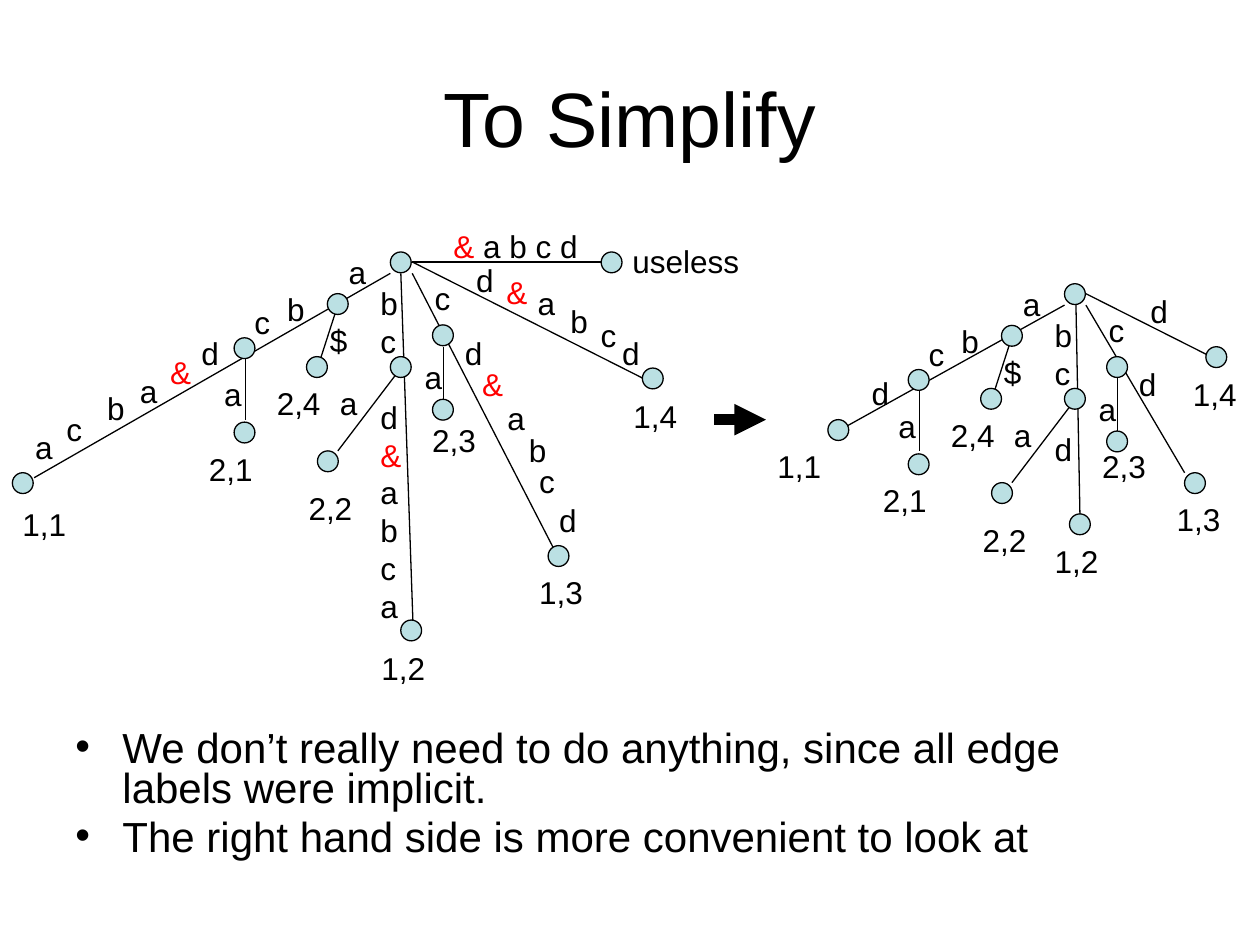
from lxml import etree
from pptx import Presentation
from pptx.dml.color import RGBColor
from pptx.enum.shapes import MSO_CONNECTOR, MSO_SHAPE
from pptx.enum.text import MSO_ANCHOR, PP_ALIGN
from pptx.oxml.ns import qn
from pptx.util import Cm, Pt

STRAIGHT = MSO_CONNECTOR.STRAIGHT
OVAL = MSO_SHAPE.OVAL
MIDDLE = MSO_ANCHOR.MIDDLE
CENTER = PP_ALIGN.CENTER

BLACK = "000000"
RED = "FF0000"
NODE_FILL = "BBE0E3"
NODE_SIZE = 0.42
LABEL_LEADING = 21.6
LEFT_COLUMN = "b\nc\nd\n&\na\nb\nc\na"
RIGHT_COLUMN = "b\nc\nd"
LABEL_WIDTHS = {"c": 0.83, "&": 0.93, LEFT_COLUMN: 0.93, "& a b c d": 3.02, "useless": 2.67}

SHARED_EDGES = [
    (6.4, 7.42, 6.81, 6.15), (4.95, 7.19, 4.95, 8.46),
    (8.08, 7.42, 6.81, 9.09), (8.94, 6.99, 8.94, 8.26),
]
SHARED_NODES = [
    (7.87, 5.08), (4.72, 6.81), (7.87, 7.19), (8.72, 6.55), (6.6, 5.92),
    (6.18, 7.19), (8.72, 8.05), (6.4, 9.09), (4.72, 8.51),
]
SHARED_LABELS = [
    ("a", 6.78, 4.98), ("b", 5.54, 5.72), ("c", 4.88, 5.99), ("c", 8.51, 5.51),
    ("d", 9.12, 6.6), ("d", 9.35, 5.13), ("a", 4.27, 7.44), ("a", 6.6, 7.62),
    ("a", 8.31, 7.09), ("$", 6.4, 6.35), ("2,1", 3.96, 8.94),
    ("2,2", 5.97, 9.73), ("2,4", 5.33, 7.62),
]

LEFT_EDGES = [
    (7.87, 5.51, 0.69, 9.63), (8.08, 5.51, 8.33, 12.7), (8.31, 5.51, 11.25, 11.23),
    (8.31, 5.28, 12.95, 7.62), (8.31, 5.28, 12.32, 5.28),
]
LEFT_NODES = [(8.08, 12.5), (11.05, 11), (0.25, 9.53), (12.95, 7.42), (12.12, 5.08)]
LEFT_LABELS = [
    ("d", 3.81, 6.6), ("&", 3.18, 6.99), ("a", 2.57, 7.37), ("b", 1.91, 7.72),
    ("c", 1.09, 8.15), ("a", 0.46, 8.51), (LEFT_COLUMN, 7.42, 5.61),
    ("&", 9.47, 7.24), ("a", 9.98, 7.92), ("b", 10.41, 8.56), ("c", 10.62, 9.19),
    ("d", 11.02, 9.98), ("&", 9.96, 5.38), ("a", 10.59, 5.61), ("b", 11.25, 5.97),
    ("c", 11.86, 6.25), ("d", 12.29, 6.6), ("& a b c d", 8.89, 4.45),
    ("1,1", 0.2, 10.06), ("1,2", 7.44, 12.95), ("1,3", 10.62, 11.43),
    ("1,4", 12.52, 7.87), ("2,3", 8.46, 8.36), ("useless", 12.5, 4.75),
]

RIGHT_EDGES = [
    (21.46, 6.15, 16.89, 8.69), (21.69, 6.15, 21.77, 10.36),
    (21.89, 6.15, 23.88, 9.53), (21.89, 5.92, 24.51, 7.24),
]
RIGHT_NODES = [(21.56, 10.36), (23.88, 9.53), (16.69, 8.46), (24.31, 6.99)]
RIGHT_LABELS = [
    ("d", 17.32, 7.42), (RIGHT_COLUMN, 21.01, 6.25), ("1,1", 15.42, 8.89),
    ("1,2", 21.01, 10.8), ("1,3", 23.47, 9.96), ("1,4", 23.8, 7.44),
    ("2,3", 21.97, 8.89),
]

deck = Presentation()
deck.slide_width, deck.slide_height = Cm(25.4), Cm(19.05)
page = deck.slides.add_slide(deck.slide_layouts[6])


def style_span(span, size, color=BLACK):
    span.font.name = "Arial"
    span.font.size = Pt(size)
    span.font.color.rgb = RGBColor.from_string(color)


def add_edge(x1, y1, x2, y2, width=0.75):
    edge = page.shapes.add_connector(STRAIGHT, Cm(x1), Cm(y1), Cm(x2), Cm(y2))
    edge.line.color.rgb = RGBColor.from_string(BLACK)
    edge.line.width = Pt(width)
    properties = edge._element.spPr
    etree.SubElement(properties, qn("a:effectLst"))
    return edge


title = page.shapes.add_textbox(Cm(1.27), Cm(0.76), Cm(22.86), Cm(3.18))
title.text_frame.word_wrap = True
title.text_frame.vertical_anchor = MIDDLE
title.text_frame.text = "To Simplify"
title_para = title.text_frame.paragraphs[0]
title_para.alignment = CENTER
style_span(title_para.runs[0], 44)

body = page.shapes.add_textbox(Cm(1.27), Cm(14.61), Cm(22.02), Cm(3.18))
body.text_frame.word_wrap = True
body.text_frame.text = (
    "We don’t really need to do anything, since all edge labels were implicit.\n"
    "The right hand side is more convenient to look at"
)
for para in body.text_frame.paragraphs:
    para.line_spacing = 0.8
    para.space_before = Pt(4.8)
    style_span(para.runs[0], 24)
    properties = para._p.get_or_add_pPr()
    properties.set("marL", str(Cm(0.95)))
    properties.set("indent", str(Cm(-0.95)))
    etree.SubElement(properties, qn("a:buFont"), typeface="Arial")
    etree.SubElement(properties, qn("a:buChar"), char="•")

trees = [
    (0, 0, LEFT_EDGES, LEFT_NODES, LEFT_LABELS),
    (13.59, 0.64, RIGHT_EDGES, RIGHT_NODES, RIGHT_LABELS),
]
for dx, dy, own_edges, own_nodes, own_labels in trees:
    edges = own_edges + [(x1 + dx, y1 + dy, x2 + dx, y2 + dy) for x1, y1, x2, y2 in SHARED_EDGES]
    nodes = own_nodes + [(x + dx, y + dy) for x, y in SHARED_NODES]
    labels = own_labels + [(text, x + dx, y + dy) for text, x, y in SHARED_LABELS]

    for edge in edges:
        add_edge(*edge)

    for x, y in nodes:
        node = page.shapes.add_shape(OVAL, Cm(x), Cm(y), Cm(NODE_SIZE), Cm(NODE_SIZE))
        node.shadow.inherit = False
        node.fill.solid()
        node.fill.fore_color.rgb = RGBColor.from_string(NODE_FILL)
        node.line.color.rgb = RGBColor.from_string(BLACK)
        node.line.width = Pt(0.75)

    for text, x, y in labels:
        lines = text.split("\n")
        width = LABEL_WIDTHS.get(text, 1.4 if "," in text else 0.86)
        height = 1.02 if len(lines) == 1 else 0.25 + 0.76 * (len(lines) + 1)
        box = page.shapes.add_textbox(Cm(x), Cm(y), Cm(width), Cm(height))
        box.text_frame.word_wrap = False
        for row, line in enumerate(lines):
            para = box.text_frame.add_paragraph() if row else box.text_frame.paragraphs[0]
            para.line_spacing = Pt(LABEL_LEADING)
            if row == 2:
                para.space_before = Pt(LABEL_LEADING)
            for piece in filter(None, line.partition("&")):
                span = para.add_run()
                span.text = piece
                style_span(span, 18, RED if piece == "&" else BLACK)

arrow = add_edge(14.4, 8.46, 15.44, 8.46, 6)
etree.SubElement(arrow.line._get_or_add_ln(), qn("a:tailEnd"), type="triangle")

deck.save("out.pptx")
